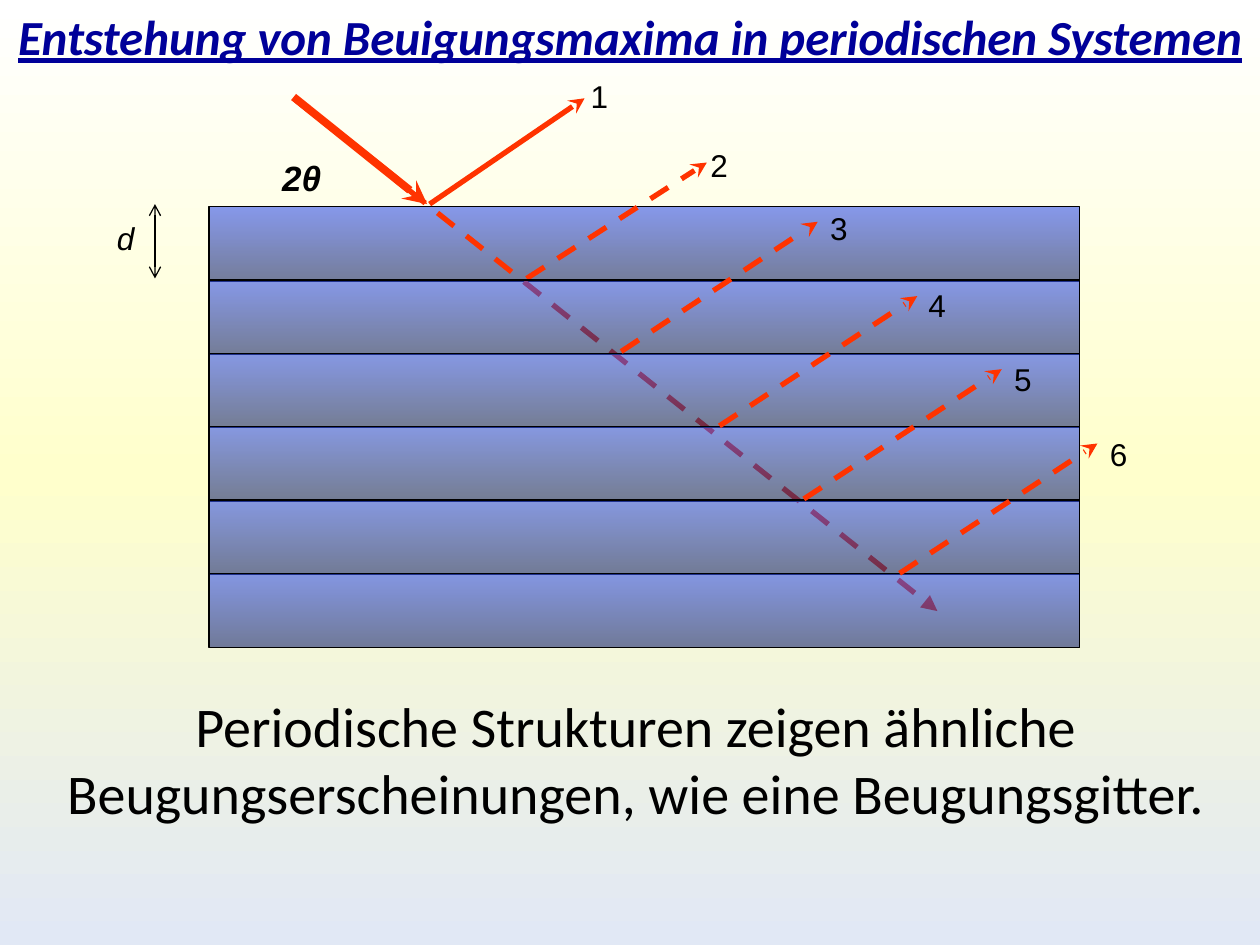
from dataclasses import dataclass
from typing import NamedTuple

from lxml.etree import SubElement
from pptx import Presentation
from pptx.dml.color import RGBColor
from pptx.enum.dml import MSO_LINE
from pptx.enum.shapes import MSO_CONNECTOR, MSO_SHAPE
from pptx.enum.text import MSO_ANCHOR, MSO_AUTO_SIZE, PP_ALIGN
from pptx.oxml.ns import qn
from pptx.util import Inches, Pt


@dataclass(frozen=True)
class Theme:
    head: str = "000099"
    ink: str = "000000"
    beam: str = "FF3300"
    sky: tuple = ((0, "FFFFFF"), (50, "FFFFCC"), (100, "E1E8F5"))
    slab: tuple = ((0, "3654EC"), (100, "19276D"))
    alpha: int = 60
    sans: str = "Calibri"
    mark: str = "Arial"
    title_pt: int = 28
    body_pt: int = 32
    angle_pt: int = 20
    label_pt: int = 18
    thin: float = 0.75
    ray: float = 3
    thick: float = 4.5


THEME = Theme()


class Point(NamedTuple):
    x: float
    y: float


class Box(NamedTuple):
    x: float
    y: float
    w: float
    h: float


class Ray(NamedTuple):
    name: str
    start: Point
    end: Point
    label: Point
    dash: bool = True


# Layer stack: six equal slabs between the first and the last top edge
COUNT, FIRST, LAST = 6, 1.64, 4.55
PITCH = (LAST - FIRST) / (COUNT - 1)

UPPER = (
    Ray("2", Point(4.18, 2.21), Point(5.61, 1.29), Point(5.54, 1.11)),
    Ray("1", Point(3.41, 1.62), Point(4.64, 0.78), Point(4.59, 0.56), False),
)
LOWER = (
    Ray("3", Point(4.93, 2.79), Point(6.49, 1.76), Point(6.49, 1.61)),
    Ray("4", Point(5.71, 3.38), Point(7.28, 2.35), Point(7.27, 2.22)),
    Ray("5", Point(6.38, 3.96), Point(7.95, 2.93), Point(7.95, 2.81)),
    Ray("6", Point(7.14, 4.55), Point(8.71, 3.52), Point(8.71, 3.4)),
)


def grade(fill, root, stops: tuple, alpha: int = 100) -> None:
    """Fill from top to bottom with (percent, colour) stops."""
    fill.gradient()
    fill.gradient_angle = 270
    items = next(root.iter(qn("a:gsLst")))
    for old in list(items):
        items.remove(old)
    for place, tint in stops:
        stop = SubElement(items, qn("a:gs"), pos=str(place * 1000))
        color = SubElement(stop, qn("a:srgbClr"), val=tint)
        if alpha < 100:
            SubElement(color, qn("a:alpha"), val=str(alpha * 1000))


def style(para, font: str, size: float, color: str, bold: bool = False,
          italic: bool = False, under: bool = False) -> None:
    for run in para.runs:
        face = run.font
        face.name, face.size = font, Pt(size)
        face.color.rgb = RGBColor.from_string(color)
        face.bold, face.italic, face.underline = bold, italic, under


def fill_holder(holder, box: Box, text: str):
    """Place a template placeholder and return its centred paragraph."""
    holder.left, holder.top, holder.width, holder.height = map(Inches, box)
    frame = holder.text_frame
    frame.text = text
    frame.auto_size = MSO_AUTO_SIZE.NONE
    frame.vertical_anchor = MSO_ANCHOR.TOP
    para = frame.paragraphs[0]
    para.alignment = PP_ALIGN.CENTER
    para.space_before = Pt(0)
    return para


def add_label(shapes, text: str, box: Box, size: float, bold: bool = False,
              italic: bool = False, wrap: bool = False) -> None:
    frame = shapes.add_textbox(*map(Inches, box)).text_frame
    frame.word_wrap = wrap
    frame.text = text
    style(frame.paragraphs[0], THEME.mark, size, THEME.ink, bold, italic)


def add_arrow(shapes, start: Point, end: Point, color: str, width: float,
              tail: str, head: str = "", dash: bool = False) -> None:
    arrow = shapes.add_connector(
        MSO_CONNECTOR.STRAIGHT, *map(Inches, (*start, *end)))
    line = arrow.line
    line.color.rgb = RGBColor.from_string(color)
    line.width = Pt(width)
    if dash:
        line.dash_style = MSO_LINE.DASH
    props = arrow._element.spPr
    ends = props.find(qn("a:ln"))
    if head:
        SubElement(ends, qn("a:headEnd"), type=head)
    SubElement(ends, qn("a:tailEnd"), type=tail)
    SubElement(props, qn("a:effectLst"))


def add_ray(shapes, ray: Ray) -> None:
    group = shapes.add_group_shape().shapes
    add_arrow(group, ray.start, ray.end, THEME.beam, THEME.ray, "stealth",
              dash=ray.dash)
    add_label(group, ray.name, Box(*ray.label, 0.34, 0.4), THEME.label_pt)


def add_layer(shapes, index: int) -> None:
    box = Box(1.66, FIRST + index * PITCH, 6.91, 0.59)
    slab = shapes.add_shape(MSO_SHAPE.RECTANGLE, *map(Inches, box))
    slab.shadow.inherit = False
    grade(slab.fill, slab._element, THEME.slab, THEME.alpha)
    slab.line.color.rgb = RGBColor.from_string(THEME.ink)
    slab.line.width = Pt(THEME.thin)


def main() -> None:
    deck = Presentation()
    deck.slide_width, deck.slide_height = Inches(10), Inches(7.5)
    slide = deck.slides.add_slide(deck.slide_layouts[1])
    grade(slide.background.fill, slide._element, THEME.sky)
    shapes = slide.shapes

    title = fill_holder(shapes.title, Box(0, 0, 10, 0.57),
                        "Entstehung von Beuigungsmaxima in periodischen Systemen")
    style(title, THEME.sans, THEME.title_pt, THEME.head, True, True, True)

    body = fill_holder(slide.placeholders[1], Box(0.1, 5.44, 9.9, 1.18),
                       "Periodische Strukturen zeigen ähnliche "
                       "Beugungserscheinungen, wie eine Beugungsgitter.")
    props = body._p.get_or_add_pPr()
    props.set("marL", "0")
    props.set("indent", "0")
    SubElement(props, qn("a:buNone"))
    style(body, THEME.sans, THEME.body_pt, THEME.ink)

    # The lower layers veil the beam that passes into the stack
    add_layer(shapes, 0)
    add_arrow(shapes, Point(2.33, 0.77), Point(3.39, 1.62), THEME.beam,
              THEME.thick, "stealth")
    add_arrow(shapes, Point(2.33, 0.78), Point(7.44, 4.85), THEME.beam,
              THEME.ray, "triangle", dash=True)
    for ray in UPPER:
        add_ray(shapes, ray)
    add_label(shapes, "2θ", Box(2.14, 1.19, 0.58, 0.43), THEME.angle_pt,
              bold=True, italic=True, wrap=True)
    add_arrow(shapes, Point(1.23, 1.62), Point(1.23, 2.21), THEME.ink,
              THEME.thin, "arrow", head="arrow")
    add_label(shapes, "d", Box(0.83, 1.69, 0.34, 0.4), THEME.label_pt,
              italic=True)
    for index in range(1, COUNT):
        add_layer(shapes, index)
    for ray in LOWER:
        add_ray(shapes, ray)

    deck.save("out.pptx")


if __name__ == "__main__":
    main()
